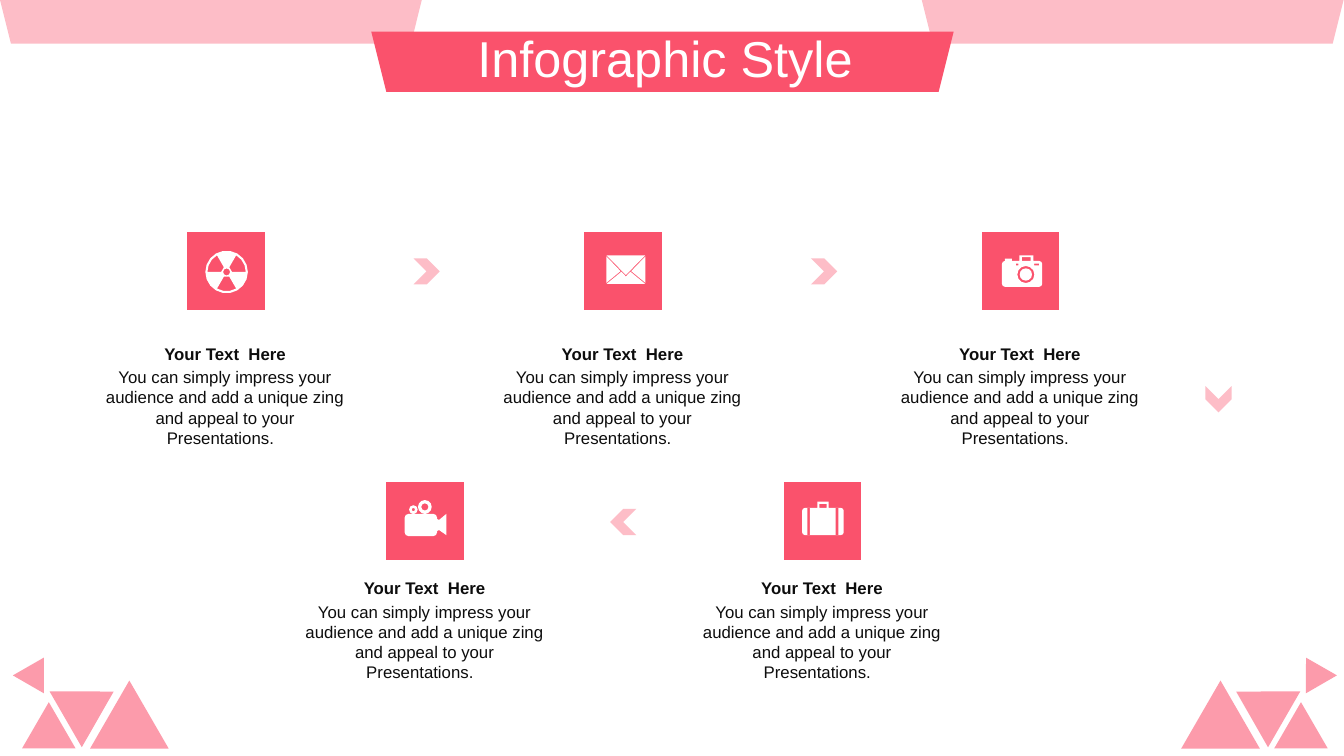
from math import cos, radians, sin

from pptx import Presentation
from pptx.dml.color import RGBColor
from pptx.enum.shapes import MSO_SHAPE
from pptx.enum.text import MSO_ANCHOR, PP_ALIGN
from pptx.util import Pt

RECTANGLE = MSO_SHAPE.RECTANGLE
TRAPEZOID = MSO_SHAPE.TRAPEZOID
CHEVRON = MSO_SHAPE.CHEVRON
TRIANGLE = MSO_SHAPE.ISOSCELES_TRIANGLE
CENTER = PP_ALIGN.CENTER
MIDDLE = MSO_ANCHOR.MIDDLE
TOP = MSO_ANCHOR.TOP

ROSE = "FA526C"
PINK = "FC9BAB"
PALE = "FDBDC7"
WHITE = "FFFFFF"
INK = "0D0D0D"

HEADING = "Your Text  Here"
BODY = "You can simply impress your audience and add a unique zing and appeal to your Presentations.  "

STEP_WIDTH = 187.2
STEP_PITCH = 283.9
TILE_SIZE = 59.5
CHEVRON_SIZE = 18.7
MIRROR_SPAN = 964.2


def color(value):
    return RGBColor.from_string(value)


def add_block(slide, kind, left, top, width, height, fill, rotation=0):
    block = slide.shapes.add_shape(kind, Pt(left), Pt(top), Pt(width), Pt(height))
    block.shadow.inherit = False
    block.fill.solid()
    block.fill.fore_color.rgb = color(fill)
    block.line.fill.background()
    block.rotation = rotation
    return block


def add_text(slide, left, top, width, height, text, size, ink, bold=False, anchor=TOP):
    label = slide.shapes.add_textbox(Pt(left), Pt(top), Pt(width), Pt(height))
    frame = label.text_frame
    frame.word_wrap = True
    frame.vertical_anchor = anchor
    frame.text = text
    paragraph = frame.paragraphs[0]
    paragraph.alignment = CENTER
    font = paragraph.runs[0].font
    font.name = "Arial"
    font.size = Pt(size)
    font.bold = bold
    font.color.rgb = color(ink)
    return paragraph


def arc(x, y, radius, start, end, steps):
    angles = [radians(start + (end - start) * i / steps) for i in range(steps + 1)]
    return [(x + radius * cos(a), y + radius * sin(a)) for a in angles]


def circle(x, y, radius, sides=12):
    return arc(x, y, radius, 0, 360, sides)[:-1]


def sector(x, y, inner, outer, start, end):
    return arc(x, y, outer, start, end, 3) + arc(x, y, inner, start, end, 1)[::-1]


def box(left, top, right, bottom):
    return [(left, top), (right, top), (right, bottom), (left, bottom)]


def round_box(left, top, right, bottom, radius):
    corners = box(left + radius, top + radius, right - radius, bottom - radius)
    return [point for i, (x, y) in enumerate(corners)
            for point in arc(x, y, radius, 180 + 90 * i, 270 + 90 * i, 2)]


def radiation():
    blades = [sector(30.4, 30.4, 3.9, 13.7, start, start + 60) for start in (60, 180, 300)]
    return [circle(30.4, 30.4, 15.2, 18), circle(30.4, 30.4, 2.5, 8)] + blades


def envelope():
    return [
        [(34.9, 30.2), (45.5, 38.9), (17.9, 38.9), (28.5, 30.2), (31.7, 33.6)],
        [(45.7, 19.2), (45.7, 38.2), (35.5, 29.8)],
        [(17.7, 19.2), (27.9, 29.8), (17.7, 38.2)],
        [(18, 18.6), (45.4, 18.6), (31.7, 32.6)],
    ]


def camera():
    return [
        round_box(16.4, 22.5, 45.2, 41, 2.2),
        box(18.5, 20.9, 23.6, 22.5),
        box(28.9, 18.5, 38.8, 22.5), box(30.6, 19.8, 37, 22.5),
        box(26.4, 24.5, 28.2, 25.7), box(39.4, 24.5, 43, 25.7),
        circle(33.5, 32.2, 6.1), circle(33.5, 32.2, 4.4),
    ]


def camcorder():
    return [
        circle(21.3, 21.4, 3.1, 8), circle(21.3, 21.4, 1.2, 6),
        circle(29.5, 19.5, 4.9), circle(29.5, 19.5, 2.6, 8),
        round_box(15.1, 24.5, 38.2, 40.3, 2.6),
        [(38.2, 28.1), (39.6, 28.8), (44.8, 24.5), (44.8, 39.6), (39.6, 36), (38.2, 36.7)],
    ]


def suitcase():
    return [
        round_box(15.1, 20.2, 44.8, 39.6, 2),
        box(18.9, 20.2, 20.7, 39.6), box(39.1, 20.2, 40.9, 39.6),
        box(25.9, 15.8, 34.1, 20.2), box(27.4, 17.3, 32.6, 20.2),
    ]


def add_icon(slide, left, top, contours):
    first, *others = [[(Pt(x), Pt(y)) for x, y in contour] for contour in contours]
    outline = slide.shapes.build_freeform(*first[0])
    outline.add_line_segments(first[1:], close=True)
    for contour in others:
        outline.move_to(*contour[0])
        outline.add_line_segments(contour[1:], close=True)
    icon = outline.convert_to_shape(Pt(left), Pt(top))
    icon.shadow.inherit = False
    icon.fill.solid()
    icon.fill.fore_color.rgb = color(WHITE)
    icon.line.fill.background()


def add_step(slide, left, tile_top, heading_top, contours):
    tile_left = left + 64.3
    tile = add_block(slide, RECTANGLE, tile_left, tile_top, TILE_SIZE, TILE_SIZE, ROSE)
    tile.line.color.rgb = color(WHITE)
    tile.line.width = Pt(4)
    add_icon(slide, tile_left, tile_top, contours)
    add_text(slide, left, heading_top + 16.7, STEP_WIDTH, 65.5, BODY, 12, INK)
    add_text(slide, left, heading_top, STEP_WIDTH, 21.6, HEADING, 12, INK, bold=True)


def add_header(slide):
    for left in (658.4, 0):
        add_block(slide, TRAPEZOID, left, 0, 301.3, 31.2, PALE, 180)
    add_block(slide, TRAPEZOID, 265.2, 22.6, 416, 43.1, ROSE, 180)
    title = add_text(slide, 19.4, 15.1, 911.5, 56.9, "Infographic Style", 36, WHITE, anchor=MIDDLE)
    title.line_spacing = 0.9
    title.space_before = Pt(10)


def add_corner_triangles(slide):
    for left, top, width, height, rotation in (
        (41, 484.1, 46.1, 39.6, 60),
        (15.8, 501.6, 38.2, 33, 0),
        (64.3, 486.1, 56.2, 48.6, 0),
        (13, 468.3, 25.6, 22, 30),
    ):
        add_block(slide, TRIANGLE, left, top, width, height, PINK, rotation)
        add_block(slide, TRIANGLE, MIRROR_SPAN - left - width, top, width, height, PINK, -rotation)


def main():
    deck = Presentation()
    deck.slide_width, deck.slide_height = Pt(960), Pt(540)
    slide = deck.slides.add_slide(deck.slide_layouts[6])
    add_header(slide)
    for first_left, tile_top, heading_top, icons in (
        (67.2, 163.9, 241.9, (radiation, envelope, camera)),
        (209.7, 342.6, 409.2, (camcorder, suitcase)),
    ):
        for column, icon in enumerate(icons):
            add_step(slide, first_left + column * STEP_PITCH, tile_top, heading_top, icon())
    for left, top, rotation in (
        (295.4, 184.5, 0), (295.4 + STEP_PITCH, 184.5, 0), (861, 275.8, 90), (435.8, 363.5, 180),
    ):
        add_block(slide, CHEVRON, left, top, CHEVRON_SIZE, CHEVRON_SIZE, PALE, rotation)
    add_corner_triangles(slide)
    deck.save("out.pptx")


if __name__ == "__main__":
    main()
